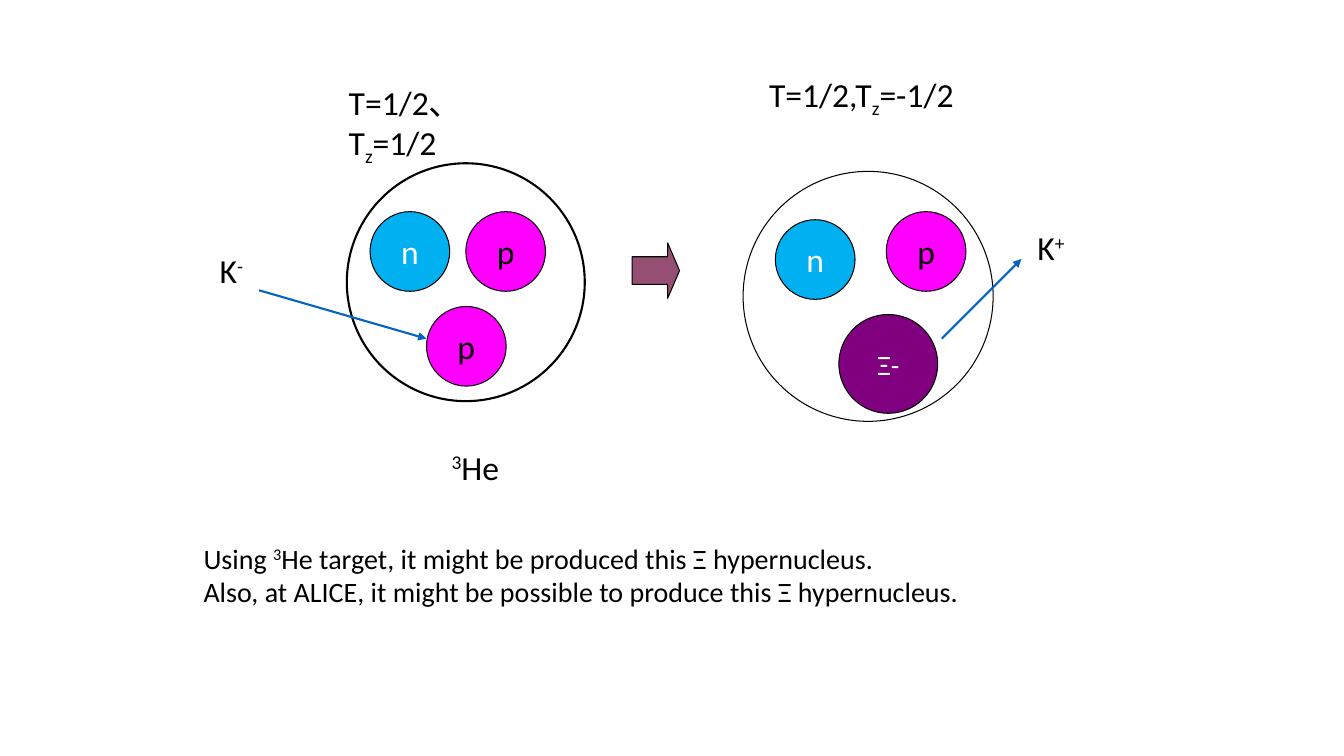
"""Slide on making a Ξ hypernucleus from a helium-3 target."""
from lxml import etree
from pptx import Presentation
from pptx.dml.color import RGBColor
from pptx.enum.shapes import MSO_CONNECTOR, MSO_SHAPE
from pptx.enum.text import MSO_ANCHOR, MSO_AUTO_SIZE, PP_ALIGN
from pptx.oxml.ns import qn
from pptx.util import Inches, Pt

OVAL, ARROW = MSO_SHAPE.OVAL, MSO_SHAPE.RIGHT_ARROW
STRAIGHT = MSO_CONNECTOR.STRAIGHT
MIDDLE, CENTER = MSO_ANCHOR.MIDDLE, PP_ALIGN.CENTER
GROW = MSO_AUTO_SIZE.SHAPE_TO_FIT_TEXT
FONT = "Calibri"
HEX = {"black": "000000", "white": "FFFFFF", "cyan": "00B0F0",
       "pink": "FF00FF", "purple": "800080", "plum": "954F72",
       "blue": "0563C1"}
RGB = {name: RGBColor.from_string(code) for name, code in HEX.items()}
SUP, SUB = 30, -25


def add_form(kind, x, y, w, h, fill=None, weight=0.75):
    form = slide.shapes.add_shape(
        kind, Inches(x), Inches(y), Inches(w), Inches(h))
    form.shadow.inherit = False
    if fill:
        form.fill.solid()
        form.fill.fore_color.rgb = RGB[fill]
    else:
        form.fill.background()
    form.line.color.rgb = RGB["black"]
    form.line.width = Pt(weight)
    return form


def set_font(para, size, color):
    para.font.name = FONT
    para.font.size = Pt(size)
    para.font.color.rgb = RGB[color]


prs = Presentation()
prs.slide_width, prs.slide_height = Inches(13.33), Inches(7.5)
slide = prs.slides.add_slide(prs.slide_layouts[6])

for x, y, size, weight in [(3.44, 1.62, 2.36, 1.5), (7.37, 1.7, 2.48, 0.75)]:
    add_form(OVAL, x, y, size, size, weight=weight)

balls = [
    ("n", 3.67, 2.1, 0.79, "cyan", "white", 24),
    ("p", 4.62, 2.1, 0.79, "pink", "black", 24),
    ("p", 4.23, 3.04, 0.79, "pink", "black", 24),
    ("n", 7.69, 2.18, 0.79, "cyan", "white", 24),
    ("p", 8.79, 2.1, 0.79, "pink", "black", 24),
    ("Ξ-", 8.32, 3.12, 0.98, "purple", "white", 20),
]
for name, x, y, size, fill, color, points in balls:
    frame = add_form(OVAL, x, y, size, size, fill).text_frame
    frame.word_wrap = False
    frame.vertical_anchor = MIDDLE
    para = frame.paragraphs[0]
    para.text = name
    para.alignment = CENTER
    set_font(para, points, color)

arrow = add_form(ARROW, 6.27, 2.41, 0.47, 0.55, "plum")
arrow.adjustments[0] = 0.5
arrow.adjustments[1] = 0.25

for x1, y1, x2, y2 in [(2.57, 2.88, 4.23, 3.36), (9.34, 3.36, 10.13, 2.57)]:
    track = slide.shapes.add_connector(
        STRAIGHT, Inches(x1), Inches(y1), Inches(x2), Inches(y2))
    track.line.color.rgb = RGB["blue"]
    track.line.width = Pt(1.5)
    props = track.line._get_or_add_ln()
    etree.SubElement(props, qn("a:tailEnd"), type="triangle")
    etree.SubElement(props.getparent(), qn("a:effectLst"))

labels = [
    (2.08, 2.43, 0.45, 0.5, 24, False, [[("K", 0), ("-", SUP)]]),
    (10.19, 2.2, 0.49, 0.5, 24, False, [[("K", 0), ("+", SUP)]]),
    (4.38, 4.38, 0.69, 0.5, 24, False, [[("3", SUP), ("He", 0)]]),
    (3.36, 0.76, 2.1, 0.5, 24, True,
     [[("T=1/2、T", 0), ("z", SUB), ("=1/2", 0)]]),
    (7.53, 0.68, 2.04, 0.5, 24, False,
     [[("T=1/2,T", 0), ("z", SUB), ("=-1/2", 0)]]),
    (1.92, 5.32, 7.69, 0.77, 20, False,
     [[("Using ", 0), ("3", SUP),
       ("He target, it might be produced this Ξ hypernucleus.", 0)],
      [("Also, at ALICE, it might be possible to produce this Ξ "
        "hypernucleus.", 0)]]),
]
for x, y, w, h, points, wrap, lines in labels:
    frame = slide.shapes.add_textbox(
        Inches(x), Inches(y), Inches(w), Inches(h)).text_frame
    frame.word_wrap = wrap
    frame.auto_size = GROW
    for i, line in enumerate(lines):
        para = frame.add_paragraph() if i else frame.paragraphs[0]
        set_font(para, points, "black")
        for text, shift in line:
            run = para.add_run()
            run.text = text
            if shift:
                run.font._element.set("baseline", str(shift * 1000))

prs.save("out.pptx")
